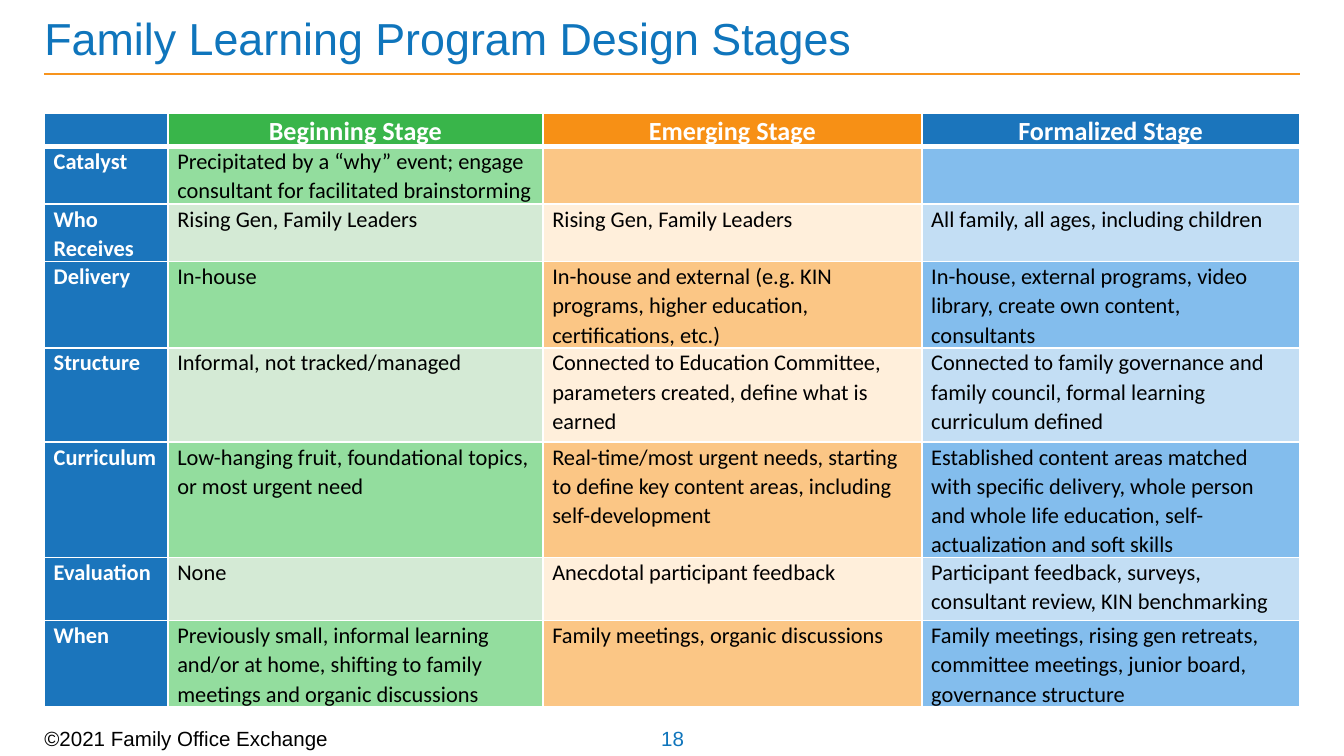
import lxml.etree
import pptx
import pptx.dml.color
import pptx.enum.shapes
import pptx.enum.text
import pptx.oxml.ns
import pptx.util

Inches = pptx.util.Inches
Pt = pptx.util.Pt
RGBColor = pptx.dml.color.RGBColor
Align = pptx.enum.text.PP_ALIGN
Anchor = pptx.enum.text.MSO_ANCHOR
qn = pptx.oxml.ns.qn

TITLE_BLUE = RGBColor(0x0F, 0x75, 0xBC)
BLUE = RGBColor(0x1B, 0x75, 0xBC)
GREEN = RGBColor(0x39, 0xB5, 0x4A)
ORANGE = RGBColor(0xF7, 0x90, 0x15)
RULE_ORANGE = RGBColor(0xF7, 0x94, 0x1D)
WHITE = RGBColor(0xFF, 0xFF, 0xFF)
BLACK = RGBColor(0, 0, 0)
HEADER_FILLS = [BLUE, GREEN, ORANGE, BLUE]
STRONG_FILLS = [BLUE, RGBColor(0x93, 0xDD, 0x9E), RGBColor(0xFB, 0xC6, 0x85), RGBColor(0x83, 0xBD, 0xED)]
PALE_FILLS = [BLUE, RGBColor(0xD4, 0xEA, 0xD5), RGBColor(0xFF, 0xEF, 0xDB), RGBColor(0xC3, 0xDE, 0xF4)]

COLUMN_WIDTHS = [0.92, 2.79, 2.82, 2.81]
ROW_HEIGHTS = [0.23, 0.4, 0.29, 0.6, 0.7, 0.86, 0.47, 0.5]
STAGES = [
    ["", "Beginning Stage", "Emerging Stage", "Formalized Stage"],
    ["Catalyst", "Precipitated by a “why” event; engage consultant for facilitated brainstorming", "", ""],
    ["Who Receives", "Rising Gen, Family Leaders", "Rising Gen, Family Leaders",
     "All family, all ages, including children"],
    ["Delivery", "In-house",
     "In-house and external (e.g. KIN programs, higher education, certifications, etc.)",
     "In-house, external programs, video library, create own content, consultants"],
    ["Structure", "Informal, not tracked/managed",
     "Connected to Education Committee, parameters created, define what is earned",
     "Connected to family governance and family council, formal learning curriculum defined"],
    ["Curriculum", "Low-hanging fruit, foundational topics, or most urgent need",
     "Real-time/most urgent needs, starting to define key content areas, including self-development",
     "Established content areas matched with specific delivery, whole person and whole life education, "
     "self-actualization and soft skills"],
    ["Evaluation", "None", "Anecdotal participant feedback",
     "Participant feedback, surveys, consultant review, KIN benchmarking"],
    ["When",
     "Previously small, informal learning and/or at home, shifting to family meetings and organic discussions",
     "Family meetings, organic discussions",
     "Family meetings, rising gen retreats, committee meetings, junior board, governance structure"],
]


def add_run(paragraph, text, size, font, color, bold=False):
    """Append one formatted run to a paragraph."""
    run = paragraph.add_run()
    run.text = text
    run.font.size = Pt(size)
    run.font.name = font
    run.font.bold = bold
    run.font.color.rgb = color


def add_label(slide, box, text, size, color, align=Align.LEFT, wrap=False):
    """Place a vertically centred line of text in a box."""
    shape = slide.shapes.add_textbox(*map(Inches, box))
    frame = shape.text_frame
    frame.word_wrap = wrap
    frame.vertical_anchor = Anchor.MIDDLE
    frame.margin_left = frame.margin_right = frame.margin_top = frame.margin_bottom = 0
    paragraph = frame.paragraphs[0]
    paragraph.alignment = align
    add_run(paragraph, text, size, "Arial", color)


def add_header(slide, left, top, width):
    """Place the title and the rule below it."""
    add_label(slide, (left, top, 8.1, 0.48), "Family Learning Program Design Stages", 24, TITLE_BLUE, wrap=True)
    rule_top = Inches(top + 0.51)
    rule = slide.shapes.add_connector(
        pptx.enum.shapes.MSO_CONNECTOR.STRAIGHT, Inches(left), rule_top, Inches(left + width), rule_top)
    rule.line.color.rgb = RULE_ORANGE
    rule.line.width = Pt(1)
    lxml.etree.SubElement(rule._element.spPr, qn("a:effectLst"))


def add_footer(slide, left, top):
    """Place the copyright line and the slide number."""
    add_label(slide, (left, top + 0.03, 2.5, 0.13), "©2021 Family Office Exchange", 11, BLACK)
    add_label(slide, (left + 4.58, top, 0.19, 0.19), "18", 11, TITLE_BLUE, Align.CENTER)


def set_borders(cell, widths):
    """Draw white borders, given point widths by side."""
    properties = cell._tc.get_or_add_tcPr()
    for side, width in widths.items():
        line = lxml.etree.SubElement(properties, qn(f"a:ln{side}"), w=str(Pt(width)))
        fill = lxml.etree.SubElement(line, qn("a:solidFill"))
        lxml.etree.SubElement(fill, qn("a:srgbClr"), val=str(WHITE))


def fill_cell(cell, text, row, column):
    """Format one cell by its row and column."""
    is_header = row == 0
    is_label = is_header or column == 0
    size = 14 if is_header else 12
    set_borders(cell, {"L": 1, "R": 1, "T": 3 if row == 1 else 1, "B": 3 if is_header else 1})
    fills = HEADER_FILLS if is_header else STRONG_FILLS if row % 2 else PALE_FILLS
    cell.fill.solid()
    cell.fill.fore_color.rgb = fills[column]
    cell.margin_left = cell.margin_right = Inches(0.07)
    cell.margin_top = cell.margin_bottom = 0
    paragraph = cell.text_frame.paragraphs[0]
    paragraph.alignment = Align.CENTER if is_header else Align.LEFT
    paragraph.line_spacing = 1.07
    if text:
        add_run(paragraph, text, size, "Calibri", WHITE if is_label else BLACK, is_label)
    else:
        lxml.etree.SubElement(paragraph._p, qn("a:endParaRPr"), sz=str(size * 100))


def add_stage_table(slide, left, top, width, height):
    """Place the table of program stages."""
    shape = slide.shapes.add_table(
        len(ROW_HEIGHTS), len(COLUMN_WIDTHS), Inches(left), Inches(top), Inches(width), Inches(height))
    table = shape.table
    table.first_row = table.horz_banding = False
    for column, column_width in zip(table.columns, COLUMN_WIDTHS):
        column.width = Inches(column_width)
    for row, row_height in zip(table.rows, ROW_HEIGHTS):
        row.height = Inches(row_height)
    shape.height = Inches(height)
    for row, texts in enumerate(STAGES):
        for column, text in enumerate(texts):
            fill_cell(table.cell(row, column), text, row, column)


def main():
    """Build and save the slide."""
    presentation = pptx.Presentation()
    presentation.slide_width = Inches(10)
    presentation.slide_height = Pt(405)
    slide = presentation.slides.add_slide(presentation.slide_layouts[6])
    add_header(slide, 0.33, 0.04, 9.34)
    add_stage_table(slide, 0.33, 0.84, 9.34, 4.37)
    add_footer(slide, 0.33, 5.4)
    presentation.save("out.pptx")


if __name__ == "__main__":
    main()
